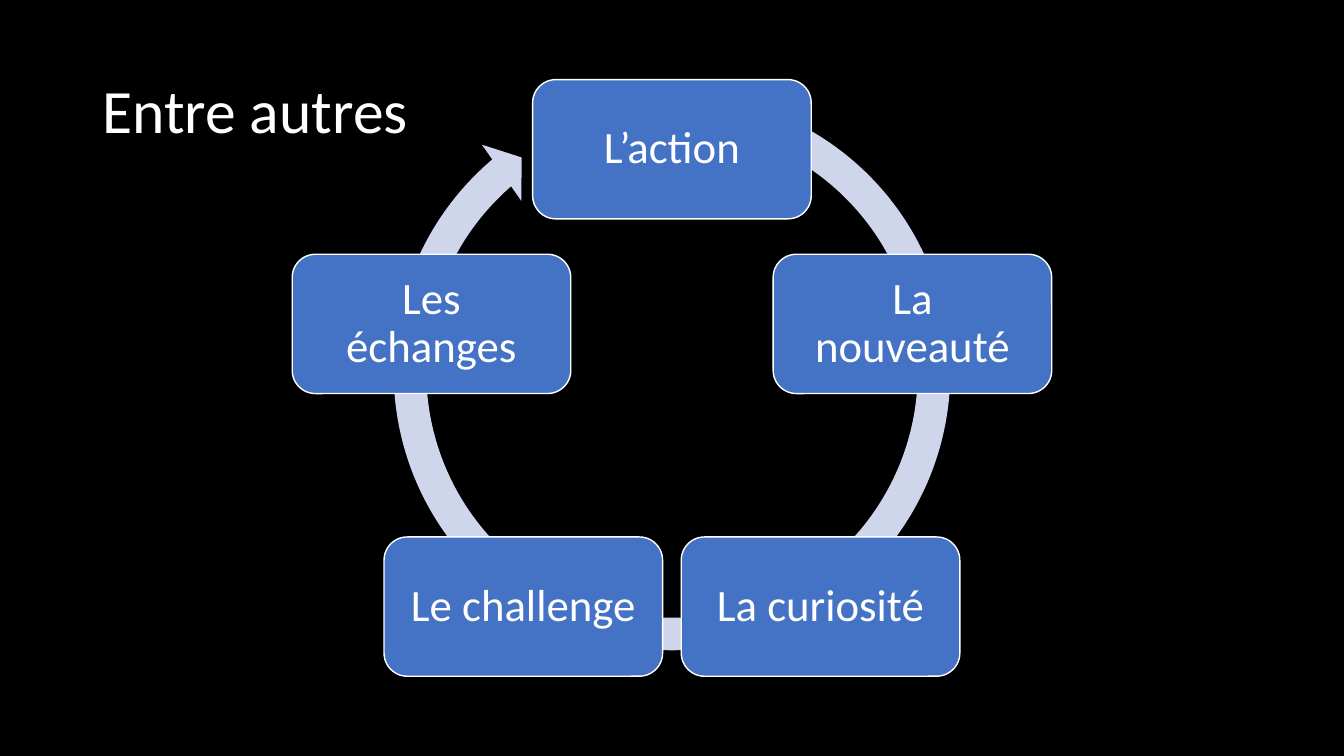
"""Build a slide showing five motivations arranged in a cycle."""
import math
from dataclasses import dataclass

from pptx import Presentation
from pptx.dml.color import RGBColor
from pptx.enum import shapes, text
from pptx.util import Pt


@dataclass(frozen=True)
class Theme:
    font: str = "Calibri"
    title_size: float = 44
    node_size: float = 32
    background: RGBColor = RGBColor(0, 0, 0)
    foreground: RGBColor = RGBColor(255, 255, 255)
    node: RGBColor = RGBColor(0x44, 0x72, 0xC4)
    ring: RGBColor = RGBColor(0xCF, 0xD5, 0xEA)


@dataclass(frozen=True)
class Cycle:
    labels: tuple[str, ...]
    center_x: float
    center_y: float
    radius: float
    node_width: float
    node_height: float


THEME = Theme()
MOTIVATIONS = Cycle(
    labels=("L’action", "La nouveauté", "La curiosité", "Le challenge", "Les échanges"),
    center_x=480, center_y=287.2, radius=180.6, node_width=199, node_height=99.5,
)


def write(shape, words: str, size: float, align) -> None:
    """Set one vertically centred paragraph in a shape."""
    frame = shape.text_frame
    frame.text = words
    frame.word_wrap = True
    frame.vertical_anchor = text.MSO_ANCHOR.MIDDLE
    para = frame.paragraphs[0]
    para.alignment = align
    para.line_spacing = 0.9
    font = para.runs[0].font
    font.name = THEME.font
    font.size = Pt(size)
    font.color.rgb = THEME.foreground


def add_filled(page, kind, left: float, top: float, width: float, height: float, color: RGBColor):
    """Add a flat preset shape without an outline."""
    shape = page.shapes.add_shape(kind, Pt(left), Pt(top), Pt(width), Pt(height))
    shape.shadow.inherit = False
    shape.fill.solid()
    shape.fill.fore_color.rgb = color
    shape.line.fill.background()
    return shape


def add_ring(page) -> None:
    """Draw the circular arrow behind the nodes."""
    ring = add_filled(page, shapes.MSO_SHAPE.CIRCULAR_ARROW, 268.3, 54, 423.4, 423.4, THEME.ring)
    for index, value in enumerate((0.055, 3.307, 137.676, 173.91, 0.058)):
        ring.adjustments[index] = value


def add_nodes(page, cycle: Cycle) -> None:
    """Place the labelled boxes clockwise from the top of the cycle."""
    for index, label in enumerate(cycle.labels):
        angle = math.tau * index / len(cycle.labels)
        left = cycle.center_x + cycle.radius * math.sin(angle) - cycle.node_width / 2
        top = cycle.center_y - cycle.radius * math.cos(angle) - cycle.node_height / 2
        box = add_filled(page, shapes.MSO_SHAPE.ROUNDED_RECTANGLE, left, top,
                         cycle.node_width, cycle.node_height, THEME.node)
        box.line.color.rgb = THEME.foreground
        box.line.width = Pt(1)
        frame = box.text_frame
        frame.margin_left = frame.margin_right = Pt(9.6)
        frame.margin_top = frame.margin_bottom = Pt(9.6)
        write(box, label, THEME.node_size, text.PP_ALIGN.CENTER)


def main() -> None:
    """Create and save the deck."""
    deck = Presentation()
    deck.slide_width, deck.slide_height = Pt(960), Pt(540)
    page = deck.slides.add_slide(deck.slide_layouts[6])
    page.background.fill.solid()
    page.background.fill.fore_color.rgb = THEME.background
    add_ring(page)
    add_nodes(page, MOTIVATIONS)
    title = page.shapes.add_textbox(Pt(66), Pt(28.75), Pt(828), Pt(104.4))
    write(title, "Entre autres", THEME.title_size, text.PP_ALIGN.LEFT)
    deck.save("out.pptx")


if __name__ == "__main__":
    main()
